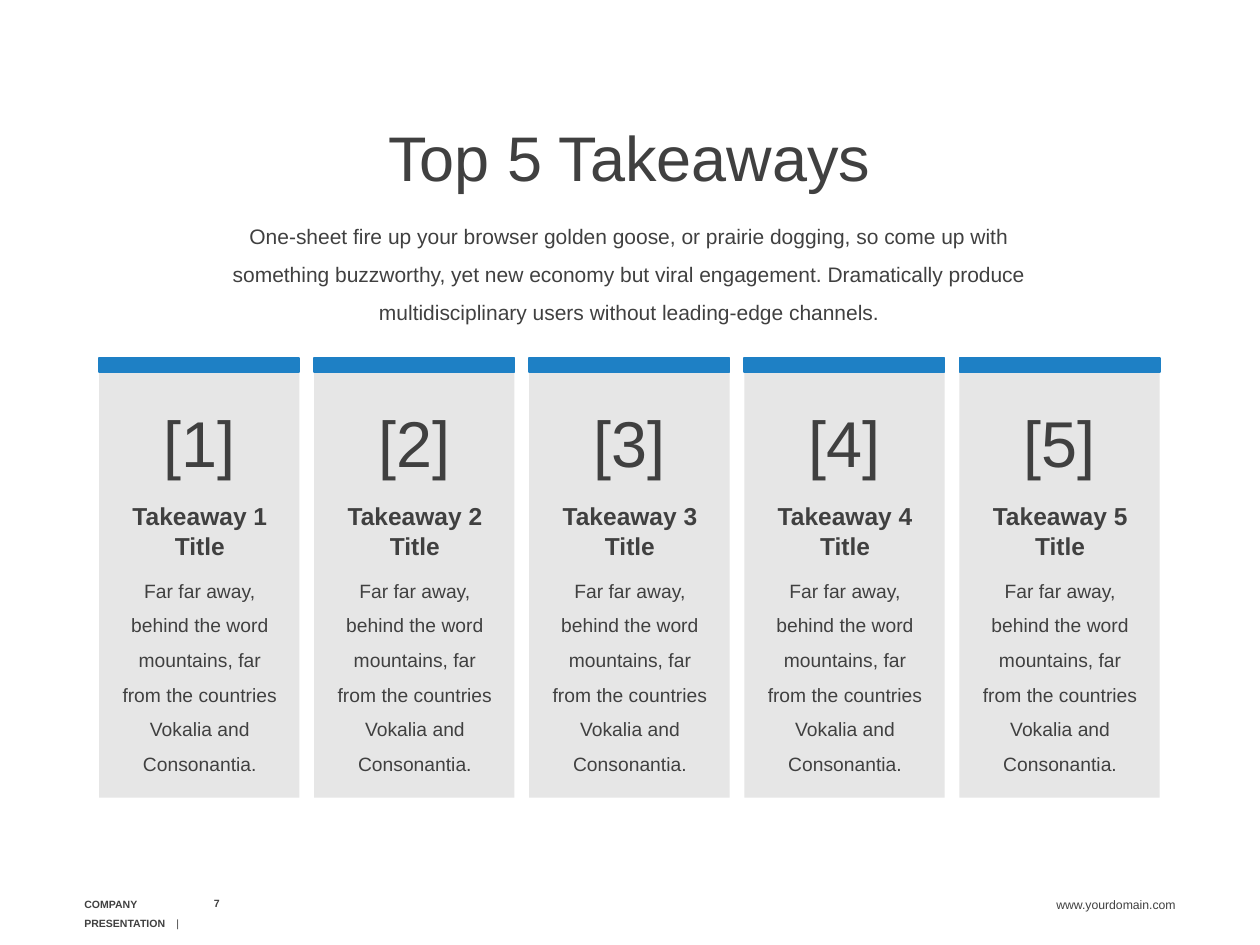
from dataclasses import dataclass

from lxml.etree import SubElement
from pptx import Presentation
from pptx.dml.color import RGBColor
from pptx.enum.shapes import MSO_SHAPE
from pptx.enum.text import MSO_ANCHOR, MSO_AUTO_SIZE, PP_ALIGN
from pptx.oxml.ns import qn
from pptx.util import Inches, Pt


@dataclass(frozen=True)
class Theme:
    font: str = "Arial"
    ink: str = "404040"
    accent: str = "1E80C5"
    panel: str = "E6E6E6"
    title: float = 36
    intro: float = 12
    number: float = 37
    heading: float = 14
    body: float = 11
    footer: float = 6
    address: float = 7


class SlideBuilder:
    """Places styled elements on a grid of 100 columns by 75 rows."""

    COLUMNS, ROWS = 100, 75

    def __init__(self, deck, theme):
        self.deck = deck
        self.theme = theme
        self.page = deck.slides.add_slide(deck.slide_layouts[1])

    def area(self, column, row, columns, rows):
        across = self.deck.slide_width / self.COLUMNS
        down = self.deck.slide_height / self.ROWS
        return (round(column * across), round(row * down),
                round(columns * across), round(rows * down))

    def prepare(self, box, text, anchor=MSO_ANCHOR.TOP, grow=True):
        frame = box.text_frame
        frame.text = text
        frame.word_wrap = True
        frame.auto_size = MSO_AUTO_SIZE.SHAPE_TO_FIT_TEXT if grow else MSO_AUTO_SIZE.NONE
        frame.vertical_anchor = anchor
        frame.margin_left = frame.margin_right = Inches(0.06)
        frame.margin_top = frame.margin_bottom = Inches(0.03)
        return frame.paragraphs

    def style(self, para, size, align=PP_ALIGN.CENTER, spacing=1.0, before=0, bold=False):
        para.alignment = align
        para.line_spacing = spacing
        para.space_before = Pt(before)
        for span in para.runs:
            span.font.name = self.theme.font
            span.font.size = Pt(size)
            span.font.bold = bold
            span.font.color.rgb = RGBColor.from_string(self.theme.ink)

    def placeholder(self, index, place, text, size, spacing, anchor):
        box = self.page.placeholders[index]
        box.left, box.top, box.width, box.height = self.area(*place)
        para = self.prepare(box, text, anchor)[0]
        self.style(para, size, spacing=spacing)
        return para

    def title(self, place, text):
        self.placeholder(0, place, text, self.theme.title, Pt(42.5), MSO_ANCHOR.TOP)

    def intro(self, place, text):
        para = self.placeholder(1, place, text, self.theme.intro, 1.5, MSO_ANCHOR.MIDDLE)
        # Plain paragraph: no bullet, no hanging indent
        properties = para._p.get_or_add_pPr()
        properties.set("marL", "0")
        properties.set("indent", "0")
        SubElement(properties, qn("a:buNone"))

    def text(self, place, text, grow=True):
        box = self.page.shapes.add_textbox(*self.area(*place))
        return self.prepare(box, text, grow=grow)

    def rectangle(self, place, color, outlined=False):
        shape = self.page.shapes.add_shape(MSO_SHAPE.RECTANGLE, *self.area(*place))
        shape.shadow.inherit = False
        shape.fill.solid()
        shape.fill.fore_color.rgb = RGBColor.from_string(color)
        if outlined:
            shape.line.color.rgb = RGBColor.from_string(color)
            shape.line.width = Pt(1)
        else:
            shape.line.fill.background()

    def card(self, left, number, description):
        theme = self.theme
        self.rectangle((left, 29.5, 15.9, 33.8), theme.panel)
        label = self.text((left + 0.2, 33.5, 15.5, 5.2), f"[{number}]")[0]
        self.style(label, theme.number, spacing=Pt(31.1))
        heading, body = self.text((left + 1.1, 39.5, 13.8, 22.4),
                                  f"Takeaway {number} Title\n{description}")
        self.style(heading, theme.heading, bold=True)
        self.style(body, theme.body, spacing=1.5, before=4.1)
        self.rectangle((left, 28.4, 15.9, 1.1), theme.accent, outlined=True)

    def footer(self, name, number, address):
        theme = self.theme
        page_number = self.text((16.1, 70.9, 2.2, 1.6), number)[0]
        self.style(page_number, theme.footer, bold=True)

        # A tab stop separates the name from the divider
        company = self.text((6.1, 70.5, 11.1, 2.4), name, grow=False)[0]
        tabs = SubElement(company._p.get_or_add_pPr(), qn("a:tabLst"))
        SubElement(tabs, qn("a:tab"), pos=str(Inches(0.73)), algn="l")
        divider = company.add_run()
        divider.text = "\t|"
        self.style(company, theme.footer, PP_ALIGN.LEFT, 1.5, bold=True)
        divider.font.bold = False

        site = self.text((75.5, 70.3, 18.4, 2.4), address, grow=False)[0]
        self.style(site, theme.address, PP_ALIGN.RIGHT, 1.5)


def main():
    deck = Presentation()
    deck.slide_width, deck.slide_height = Inches(10), Inches(7.5)
    builder = SlideBuilder(deck, Theme())

    # Footer
    builder.footer("COMPANY PRESENTATION", "7", "www.yourdomain.com")

    # Heading and introduction
    builder.title((12.9, 9.2, 74.1, 6.6), "Top 5 Takeaways")
    builder.intro(
        (15.4, 16.5, 69.1, 9.5),
        "One-sheet fire up your browser golden goose, or prairie dogging, so come up "
        "with something buzzworthy, yet new economy but viral engagement. Dramatically "
        "produce multidisciplinary users without leading-edge channels.")

    # Five equal cards
    first_left, pitch = 7.86, 17.07
    for index in range(5):
        builder.card(first_left + index * pitch, index + 1,
                     "Far far away, behind the word mountains, far from the "
                     "countries Vokalia and Consonantia.")

    deck.save("out.pptx")


if __name__ == "__main__":
    main()
